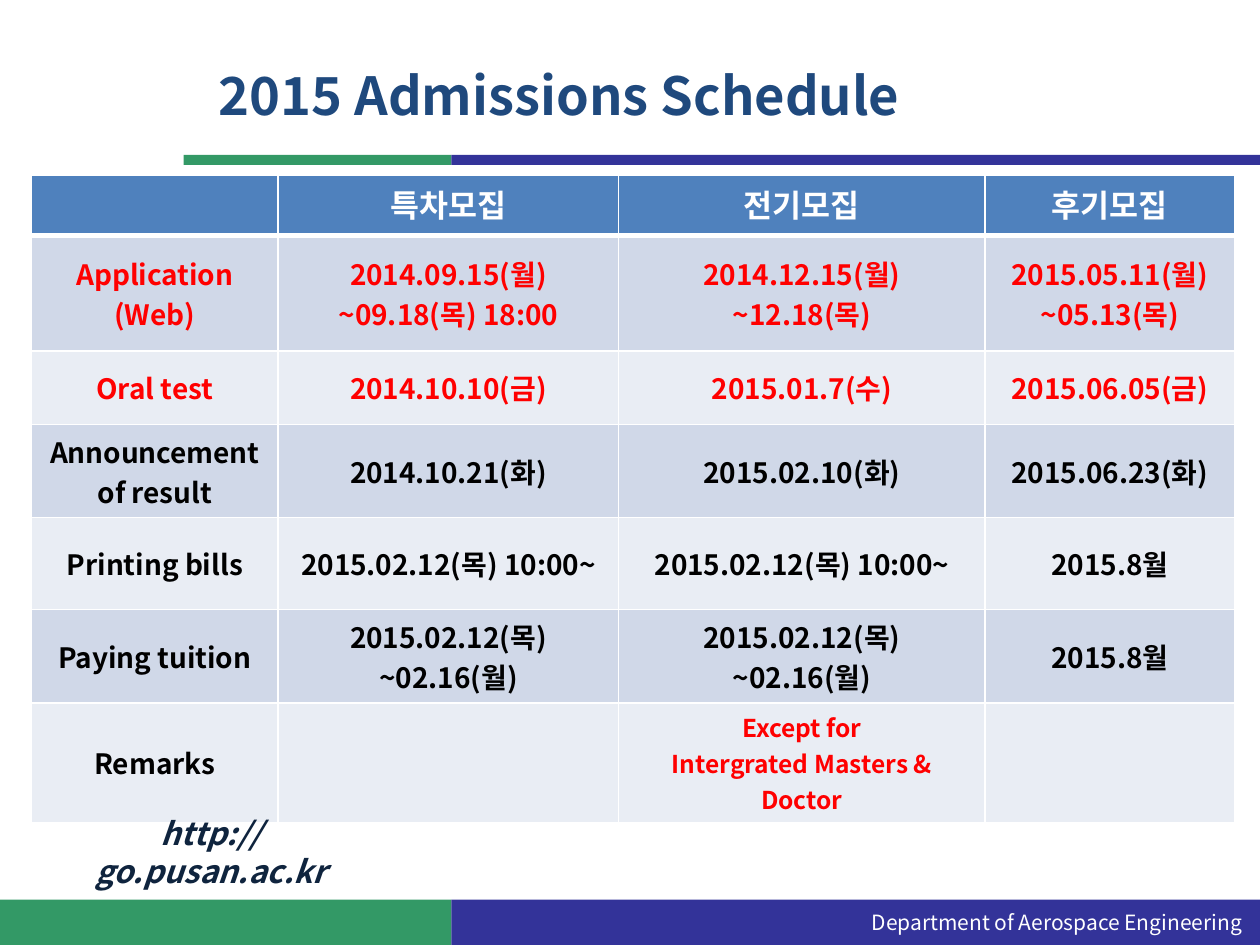
from lxml.etree import SubElement
from pptx import Presentation
from pptx.dml.color import RGBColor
from pptx.enum.shapes import MSO_SHAPE as Shape
from pptx.enum.text import MSO_ANCHOR as Anchor, MSO_AUTO_SIZE as AutoSize, PP_ALIGN as Align
from pptx.oxml.ns import qn
from pptx.util import Pt

FONT = "Noto Sans CJK KR"
WIDTH, HEIGHT, SPLIT = 720, 540, 258
GREEN, NAVY, WHITE, RED, BLACK = "339966", "333399", "FFFFFF", "FF0000", "000000"
HEADER, BANDS = "4F81BD", ("D0D8E8", "E9EDF4")
COLUMNS = (141, 194.5, 209.5, 142.5)
ROW_HEIGHTS = (34.5, 66, 42, 52.5, 52.5, 52.5, 52.5)
SCHEDULE = [
    ("", "특차모집", "전기모집", "후기모집"),
    ("Application\n(Web)", "2014.09.15(월)\n~09.18(목) 18:00",
     "2014.12.15(월)\n~12.18(목)", "2015.05.11(월)\n~05.13(목)"),
    ("Oral test", "2014.10.10(금)", "2015.01.7(수)", "2015.06.05(금)"),
    ("Announcement of result", "2014.10.21(화)", "2015.02.10(화)", "2015.06.23(화)"),
    ("Printing bills", "2015.02.12(목) 10:00~", "2015.02.12(목) 10:00~", "2015.8월"),
    ("Paying tuition", "2015.02.12(목)\n~02.16(월)", "2015.02.12(목)\n~02.16(월)", "2015.8월"),
    ("Remarks", "", "Except for\nIntergrated Masters & Doctor", ""),
]


def rgb(value):
    """Turn a hex string into a colour."""
    return RGBColor.from_string(value)


def write(tf, text, size, color, align=Align.CENTER, bold=True, italic=False):
    """Fill a text frame and format all of its runs."""
    tf.text = text
    for p in tf.paragraphs:
        p.alignment = align
        for r in p.runs:
            r.font.name, r.font.size = FONT, Pt(size)
            r.font.bold, r.font.italic = bold, italic
            r.font.color.rgb = rgb(color)
            SubElement(r.font._element, qn("a:ea"), typeface=FONT)


def add_bar(s, x, y, w, h, color):
    """Add a plain filled bar."""
    bar = s.shapes.add_shape(Shape.RECTANGLE, Pt(x), Pt(y), Pt(w), Pt(h))
    bar.shadow.inherit = False
    bar.fill.solid()
    bar.fill.fore_color.rgb = rgb(color)
    bar.line.fill.background()
    return bar


def add_stripe(s, x, y, h):
    """Add a green and navy stripe that runs to the right edge."""
    add_bar(s, x, y, SPLIT - x, h, GREEN)
    return add_bar(s, SPLIT, y, WIDTH - SPLIT, h, NAVY)


def add_footer(s, y, h):
    """Add the bottom stripe with the department name."""
    tf = add_stripe(s, 0, y, h).text_frame
    tf.margin_right = Pt(10)
    tf.vertical_anchor = Anchor.MIDDLE
    write(tf, "Department of Aerospace Engineering", 12, WHITE, Align.RIGHT, bold=False)


def add_title(s, x, y, w, h):
    """Add the slide title."""
    tf = s.shapes.add_textbox(Pt(x), Pt(y), Pt(w), Pt(h)).text_frame
    tf.word_wrap = True
    tf.margin_left = Pt(20)
    tf.vertical_anchor = Anchor.MIDDLE
    write(tf, "2015 Admissions Schedule", 30, "1F497D", Align.LEFT)


def add_link(s, x, y, w, h):
    """Add the web address below the table."""
    tf = s.shapes.add_textbox(Pt(x), Pt(y), Pt(w), Pt(h)).text_frame
    tf.word_wrap = True
    tf.auto_size = AutoSize.SHAPE_TO_FIT_TEXT
    write(tf, "http://go.pusan.ac.kr", 18, "0F243E", italic=True)
    tf.paragraphs[0].line_spacing = Pt(21.5)


def style_cell(cell, fill, bottom):
    """Fill a cell and draw its white borders."""
    tc_pr = cell._tc.get_or_add_tcPr()
    for tag, width in (("lnL", 1), ("lnR", 1), ("lnT", 1), ("lnB", bottom)):
        line = SubElement(tc_pr, qn(f"a:{tag}"), w=str(Pt(width)))
        SubElement(SubElement(line, qn("a:solidFill")), qn("a:srgbClr"), val=WHITE)
    cell.fill.solid()
    cell.fill.fore_color.rgb = rgb(fill)


def add_schedule(s, x, y):
    """Add the admissions table."""
    table = s.shapes.add_table(len(SCHEDULE), len(COLUMNS), Pt(x), Pt(y),
                               Pt(sum(COLUMNS)), Pt(sum(ROW_HEIGHTS))).table
    for column, width in zip(table.columns, COLUMNS):
        column.width = Pt(width)
    for i, (row, height, texts) in enumerate(zip(table.rows, ROW_HEIGHTS, SCHEDULE)):
        row.height = Pt(height)
        for j, (cell, text) in enumerate(zip(row.cells, texts)):
            if i == 0:
                size, color, fill, bottom = 18, WHITE, HEADER, 3
            else:
                remark = i == len(SCHEDULE) - 1 and j > 0
                size = 14 if remark else 16
                color = RED if remark or i < 3 else BLACK
                fill, bottom = BANDS[(i - 1) % 2], 1
                cell.vertical_anchor = Anchor.MIDDLE
            style_cell(cell, fill, bottom)
            if text:
                write(cell.text_frame, text, size, color)


def main():
    """Build and save the slide."""
    prs = Presentation()
    prs.slide_width, prs.slide_height = Pt(WIDTH), Pt(HEIGHT)
    s = prs.slides.add_slide(prs.slide_layouts[6])
    add_footer(s, 514, 26)
    add_stripe(s, 105, 88.5, 5.75)
    add_schedule(s, 18, 100)
    add_title(s, 105, 20, 615, 68.5)
    add_link(s, 24, 462, 193, 29)
    prs.save("out.pptx")


if __name__ == "__main__":
    main()
